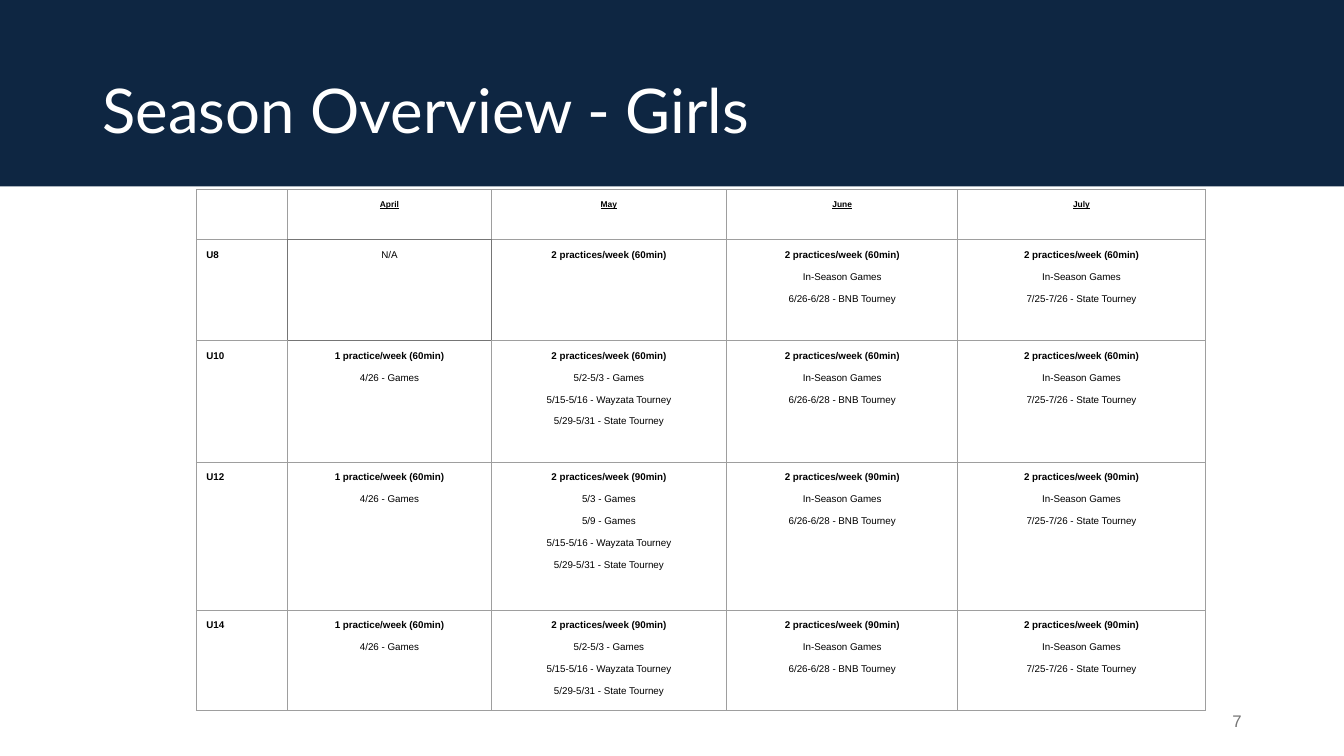
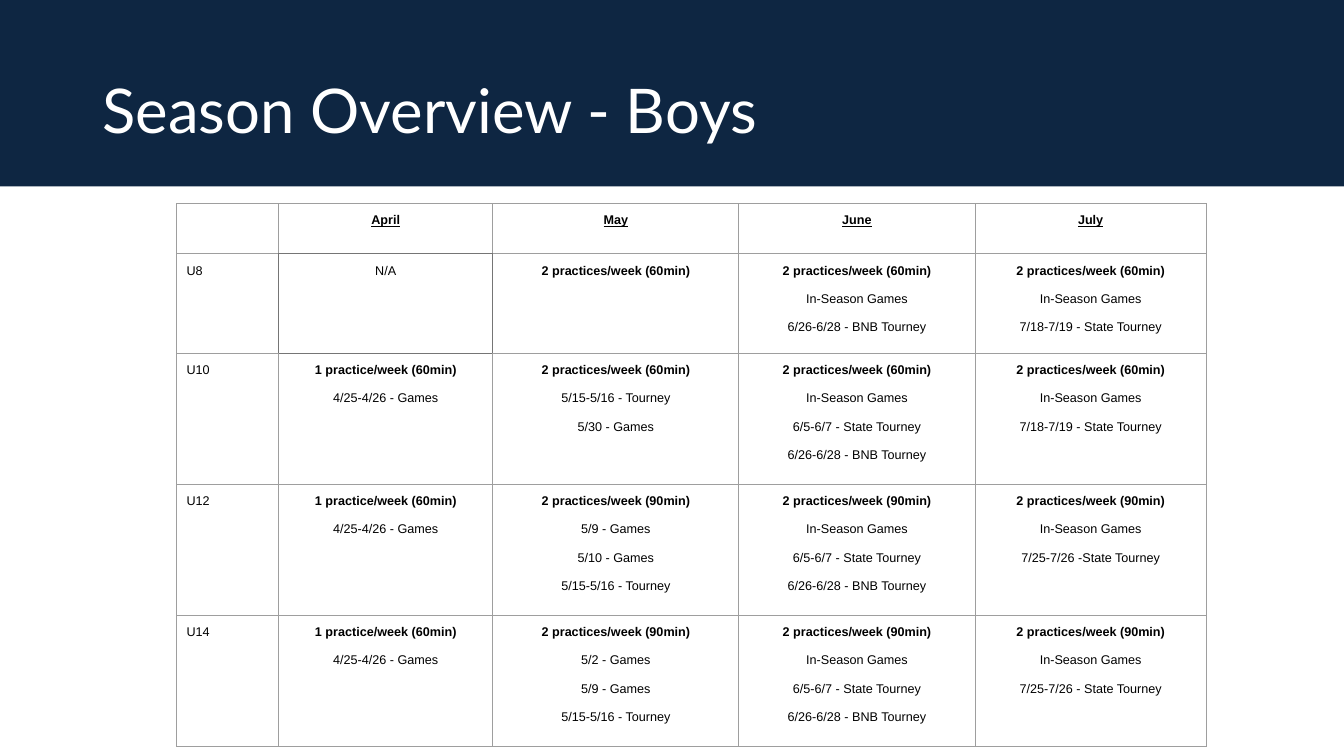
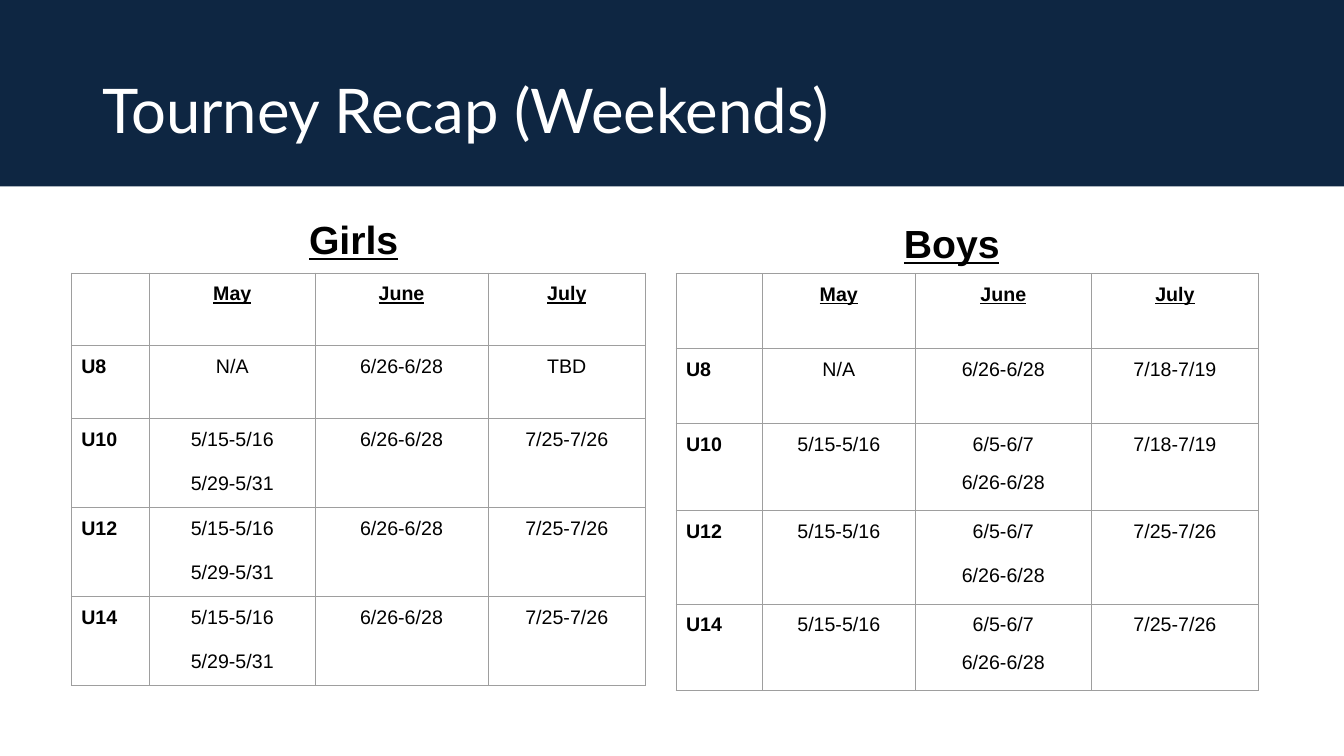
"""Builds the season overview and tourney recap slides."""
from dataclasses import dataclass

from lxml.etree import SubElement
from pptx import Presentation
from pptx.dml.color import RGBColor
from pptx.enum.shapes import MSO_SHAPE as Shape
from pptx.enum.text import MSO_ANCHOR as Anchor, PP_ALIGN as Align
from pptx.oxml.ns import qn
from pptx.util import Cm, Pt


@dataclass(frozen=True)
class Theme:
    navy: str = "0E2642"
    white: str = "FFFFFF"
    black: str = "000000"
    grid: str = "9E9E9E"
    gray: str = "757575"
    title_font: str = "Lato"
    body_font: str = "Arial"
    title_size: int = 44
    heading_size: int = 28
    recap_size: int = 14
    number_size: int = 12
    girls_header_size: int = 6
    girls_size: int = 7
    boys_size: int = 9
    tight_gap: int = 10
    border_width: float = 0.75
    gap_factor: float = 1.12


GRAY_EDGES = {(1, 1): "LRTB", (0, 1): "B", (2, 1): "T", (1, 0): "R", (1, 2): "L"}


class SeasonDeck:
    def __init__(self, theme):
        self.theme = theme
        self.deck = Presentation()
        self.deck.slide_width, self.deck.slide_height = Cm(33.87), Cm(19.05)
        self.page = None

    def add_page(self, title):
        theme = self.theme
        self.page = self.deck.slides.add_slide(self.deck.slide_layouts[6])
        band = self.page.shapes.add_shape(Shape.RECTANGLE, 0, 0, self.deck.slide_width, Cm(4.7))
        band.shadow.inherit = False
        band.fill.solid()
        band.fill.fore_color.rgb = RGBColor.from_string(theme.navy)
        band.line.fill.background()
        para = self.add_box(2.33, 1.01, 29.21, 3.68, Anchor.MIDDLE)
        para.line_spacing = 0.9
        self.add_span(para, title, theme.title_size, theme.white, font=theme.title_font)

    def add_box(self, left, top, width, height, anchor, margin=0.13):
        box = self.page.shapes.add_textbox(Cm(left), Cm(top), Cm(width), Cm(height))
        frame = box.text_frame
        frame.word_wrap = True
        frame.vertical_anchor = anchor
        frame.margin_top = frame.margin_bottom = Cm(margin)
        return frame.paragraphs[0]

    def add_span(self, para, text, size, color, bold=False, underline=False, font=None):
        span = para.add_run()
        span.text = text
        span.font.name = font or self.theme.body_font
        span.font.size = Pt(size)
        span.font.bold = bold
        span.font.underline = underline
        span.font.color.rgb = RGBColor.from_string(color)

    def add_number(self, number):
        para = self.add_box(23.92, 17.65, 7.62, 1.01, Anchor.MIDDLE)
        para.alignment = Align.RIGHT
        self.add_span(para, number, self.theme.number_size, self.theme.gray)

    def add_heading(self, left, top, text):
        para = self.add_box(left, top, 6.91, 1.02, Anchor.TOP, 0.25)
        self.add_span(para, text, self.theme.heading_size, self.theme.black, True, True)

    def add_grid(self, left, top, widths, heights, months, groups, size,
                 header_size=None, bold_labels=True, gray_edges=None, gaps=None):
        frame = self.page.shapes.add_table(len(heights), len(widths), Cm(left), Cm(top),
                                           Cm(sum(widths)), Cm(sum(heights)))
        table = frame.table
        table.first_row = table.horz_banding = False
        for column, width in zip(table.columns, widths):
            column.width = Cm(width)
        for row, height in zip(table.rows, heights):
            row.height = Cm(height)
        rows = [[[]] + [[month] for month in months]]
        rows += [[[label]] + cells for label, cells in groups.items()]
        for row, cells in enumerate(rows):
            gap = (gaps or {}).get(row, size) * self.theme.gap_factor
            for column, lines in enumerate(cells):
                cell = table.cell(row, column)
                self.style_cell(cell, (gray_edges or {}).get((row, column), ""))
                for index, line in enumerate(lines):
                    frame = cell.text_frame
                    para = frame.add_paragraph() if index else frame.paragraphs[0]
                    if index:
                        para.space_before = Pt(round(gap, 1))
                    para.alignment = Align.CENTER if column else Align.LEFT
                    bold = row == 0 or "week" in line or (column == 0 and bold_labels)
                    line_size = size if row else header_size or size
                    self.add_span(para, line, line_size, self.theme.black, bold, row == 0)

    def style_cell(self, cell, gray_sides):
        cell.margin_left = cell.margin_right = Cm(0.25)
        cell.margin_top = cell.margin_bottom = Cm(0.25)
        properties = cell._tc.get_or_add_tcPr()
        for side in "LRTB":
            line = SubElement(properties, qn(f"a:ln{side}"), w=str(Pt(self.theme.border_width)))
            fill = SubElement(line, qn("a:solidFill"))
            color = self.theme.gray if side in gray_sides else self.theme.grid
            SubElement(fill, qn("a:srgbClr"), val=color)
        cell.fill.background()


def practice(minutes, *events):
    return [f"2 practices/week ({minutes}min)", *events]


def april(games):
    return ["1 practice/week (60min)", f"{games} - Games"]


def in_season(minutes, *events):
    return practice(minutes, "In-Season Games", *events)


def main():
    theme = Theme()
    season = SeasonDeck(theme)
    months = ["April", "May", "June", "July"]
    bnb = "6/26-6/28 - BNB Tourney"
    june_state = "6/5-6/7 - State Tourney"
    early_state = "7/18-7/19 - State Tourney"
    late_state = "7/25-7/26 - State Tourney"
    may_state = "5/29-5/31 - State Tourney"
    wayzata = "5/15-5/16 - Wayzata Tourney"
    may_tourney = "5/15-5/16 - Tourney"

    season.add_page("Season Overview - Girls")
    season.add_number("7")
    season.add_grid(
        4.95, 4.78, [2.3, 5.13, 5.93, 5.83, 6.23], [1.21, 2.54, 3.06, 3.73, 2.53], months, {
            "U8": [["N/A"], practice(60), in_season(60, bnb), in_season(60, late_state)],
            "U10": [april("4/26"), practice(60, "5/2-5/3 - Games", wayzata, may_state),
                    in_season(60, bnb), in_season(60, late_state)],
            "U12": [april("4/26"),
                    practice(90, "5/3 - Games", "5/9 - Games", wayzata, may_state),
                    in_season(90, bnb), in_season(90, late_state)],
            "U14": [april("4/26"), practice(90, "5/2-5/3 - Games", wayzata, may_state),
                    in_season(90, bnb), in_season(90, late_state)],
        }, theme.girls_size, theme.girls_header_size, gray_edges=GRAY_EDGES)

    season.add_page("Season Overview - Boys")
    season.add_grid(
        4.45, 5.13, [2.57, 5.4, 6.2, 5.95, 5.83], [1.22, 2.51, 3.3, 3.3, 3.3], months, {
            "U8": [["N/A"], practice(60), in_season(60, bnb), in_season(60, early_state)],
            "U10": [april("4/25-4/26"), practice(60, may_tourney, "5/30 - Games"),
                    in_season(60, june_state, bnb), in_season(60, early_state)],
            "U12": [april("4/25-4/26"),
                    practice(90, "5/9 - Games", "5/10 - Games", may_tourney),
                    in_season(90, june_state, bnb), in_season(90, "7/25-7/26 -State Tourney")],
            "U14": [april("4/25-4/26"),
                    practice(90, "5/2 - Games", "5/9 - Games", may_tourney),
                    in_season(90, june_state, bnb), in_season(90, late_state)],
        }, theme.boys_size, bold_labels=False, gray_edges=GRAY_EDGES)

    season.add_page("Tourney Recap (Weekends)")
    early_may, late_may, early_june = "5/15-5/16", "5/29-5/31", "6/5-6/7"
    late_june, mid_july, late_july = "6/26-6/28", "7/18-7/19", "7/25-7/26"
    girls_weekends = [[early_may, late_may], [late_june], [late_july]]
    boys_weekends = [[early_may], [early_june, late_june], [late_july]]
    season.add_grid(
        1.8, 6.88, [1.97, 4.17, 4.36, 3.97], [1.83, 1.84, 2.18, 2.18, 2.18], months[1:], {
            "U8": [["N/A"], [late_june], ["TBD"]],
            "U10": girls_weekends, "U12": girls_weekends, "U14": girls_weekends,
        }, theme.recap_size)
    season.add_grid(
        17.04, 6.9, [2.17, 3.86, 4.43, 4.22], [1.88, 1.9, 2.18, 2.36, 2.18], months[1:], {
            "U8": [["N/A"], [late_june], [mid_july]],
            "U10": [[early_may], [early_june, late_june], [mid_july]],
            "U12": boys_weekends, "U14": boys_weekends,
        }, theme.recap_size, gaps={2: theme.tight_gap, 4: theme.tight_gap})
    season.add_heading(7.54, 5.18, "Girls")
    season.add_heading(22.53, 5.28, "Boys")
    season.deck.save("out.pptx")


if __name__ == "__main__":
    main()
